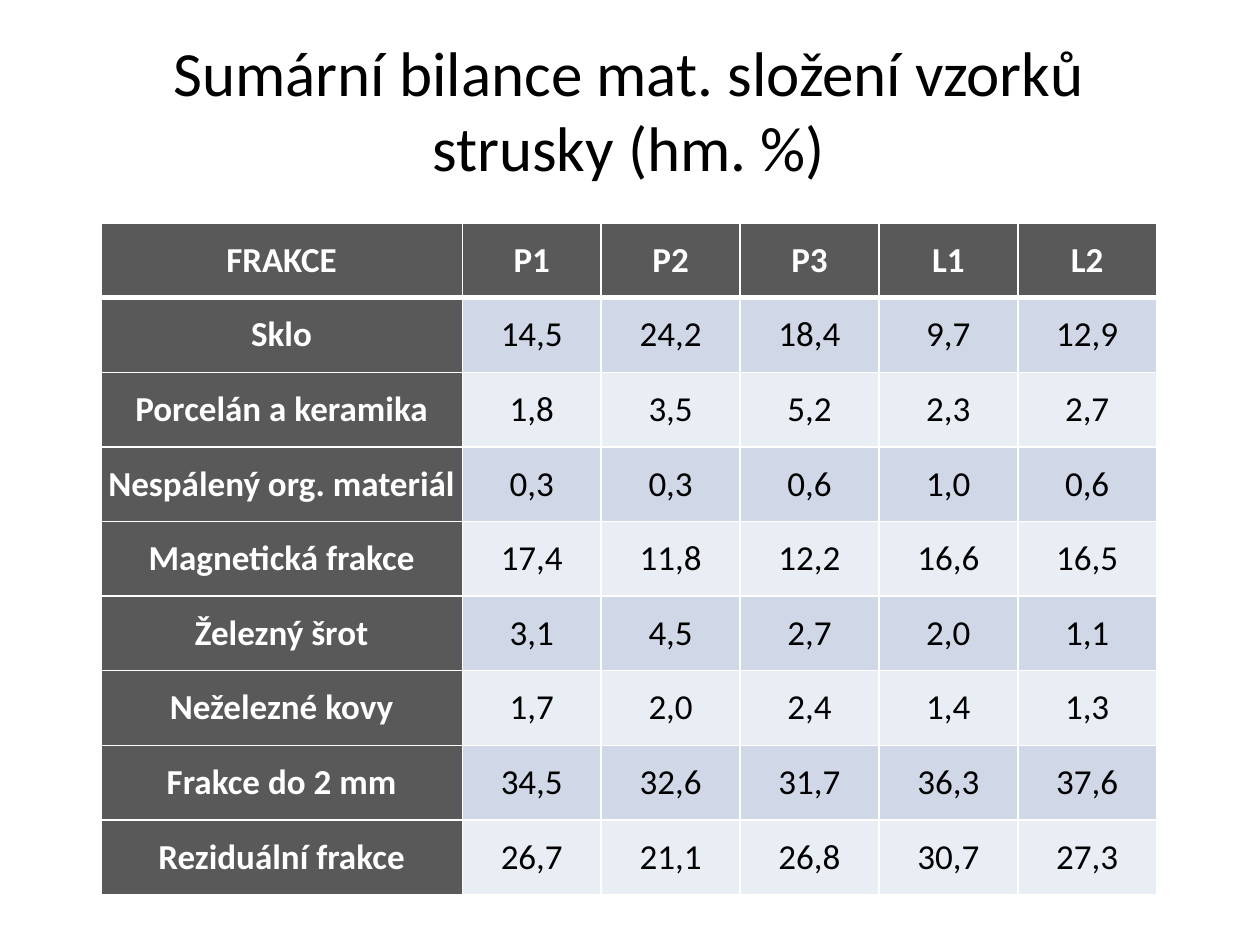
from lxml import etree
from pptx import Presentation
from pptx.dml.color import RGBColor
from pptx.enum.text import MSO_ANCHOR, PP_ALIGN
from pptx.oxml.ns import qn
from pptx.util import Inches, Pt

CENTER = PP_ALIGN.CENTER
MIDDLE = MSO_ANCHOR.MIDDLE
FONT = "Calibri"
BLACK = RGBColor(0x00, 0x00, 0x00)
WHITE = RGBColor(0xFF, 0xFF, 0xFF)
DARK_GRAY = RGBColor(0x59, 0x59, 0x59)
BAND_COLORS = (RGBColor(0xD0, 0xD8, 0xE8), RGBColor(0xE9, 0xED, 0xF4))

TITLE = "Sumární bilance mat. složení vzorků strusky (hm. %)"
FRACTIONS = [
    ("FRAKCE", "P1", "P2", "P3", "L1", "L2"),
    ("Sklo", "14,5", "24,2", "18,4", "9,7", "12,9"),
    ("Porcelán a keramika", "1,8", "3,5", "5,2", "2,3", "2,7"),
    ("Nespálený org. materiál", "0,3", "0,3", "0,6", "1,0", "0,6"),
    ("Magnetická frakce", "17,4", "11,8", "12,2", "16,6", "16,5"),
    ("Železný šrot", "3,1", "4,5", "2,7", "2,0", "1,1"),
    ("Neželezné kovy", "1,7", "2,0", "2,4", "1,4", "1,3"),
    ("Frakce do 2 mm", "34,5", "32,6", "31,7", "36,3", "37,6"),
    ("Reziduální frakce", "26,7", "21,1", "26,8", "30,7", "27,3"),
]


def write_text(text_frame, text, size, color, bold=False):
    text_frame.text = text
    paragraph = text_frame.paragraphs[0]
    paragraph.alignment = CENTER
    font = paragraph.runs[0].font
    font.name = FONT
    font.size = Pt(size)
    font.bold = bold
    font.color.rgb = color


def add_title(slide, left, top, width, height):
    text_frame = slide.shapes.add_textbox(left, top, width, height).text_frame
    text_frame.word_wrap = True
    text_frame.vertical_anchor = MIDDLE
    write_text(text_frame, TITLE, 36, BLACK)


def set_borders(cell, **widths):
    properties = cell._tc.get_or_add_tcPr()
    for side in "LRTB":
        width = Pt(widths.get(side, 1))
        line = etree.SubElement(properties, qn(f"a:ln{side}"), w=str(width))
        fill = etree.SubElement(line, qn("a:solidFill"))
        etree.SubElement(fill, qn("a:srgbClr"), val=str(WHITE))


def format_cell(cell, text, row, column):
    is_heading = row == 0 or column == 0
    cell.margin_left = cell.margin_right = Inches(0.05)
    cell.margin_top = cell.margin_bottom = 0
    cell.vertical_anchor = MIDDLE
    set_borders(cell, T=3 if row == 1 else 1, B=3 if row == 0 else 1)
    cell.fill.solid()
    cell.fill.fore_color.rgb = DARK_GRAY if is_heading else BAND_COLORS[(row - 1) % 2]
    write_text(cell.text_frame, text, 20, WHITE if is_heading else BLACK, is_heading)


def add_fraction_table(slide, left, top, width, height):
    row_count, column_count = len(FRACTIONS), len(FRACTIONS[0])
    table = slide.shapes.add_table(
        row_count, column_count, left, top, width, height
    ).table
    label_width = Inches(2.87)
    value_width = (width - label_width) // (column_count - 1)
    for index, column in enumerate(table.columns):
        column.width = value_width if index else label_width
    for row, values in enumerate(FRACTIONS):
        for column, text in enumerate(values):
            format_cell(table.cell(row, column), text, row, column)


def main():
    presentation = Presentation()
    presentation.slide_width = Inches(10)
    presentation.slide_height = Inches(7.5)
    slide = presentation.slides.add_slide(presentation.slide_layouts[6])
    left, width = Inches(0.8), Inches(8.38)
    add_title(slide, left, Inches(0.21), width, Inches(1.31))
    add_fraction_table(slide, left, Inches(1.77), width, Inches(5.33))
    presentation.save("out.pptx")


if __name__ == "__main__":
    main()
